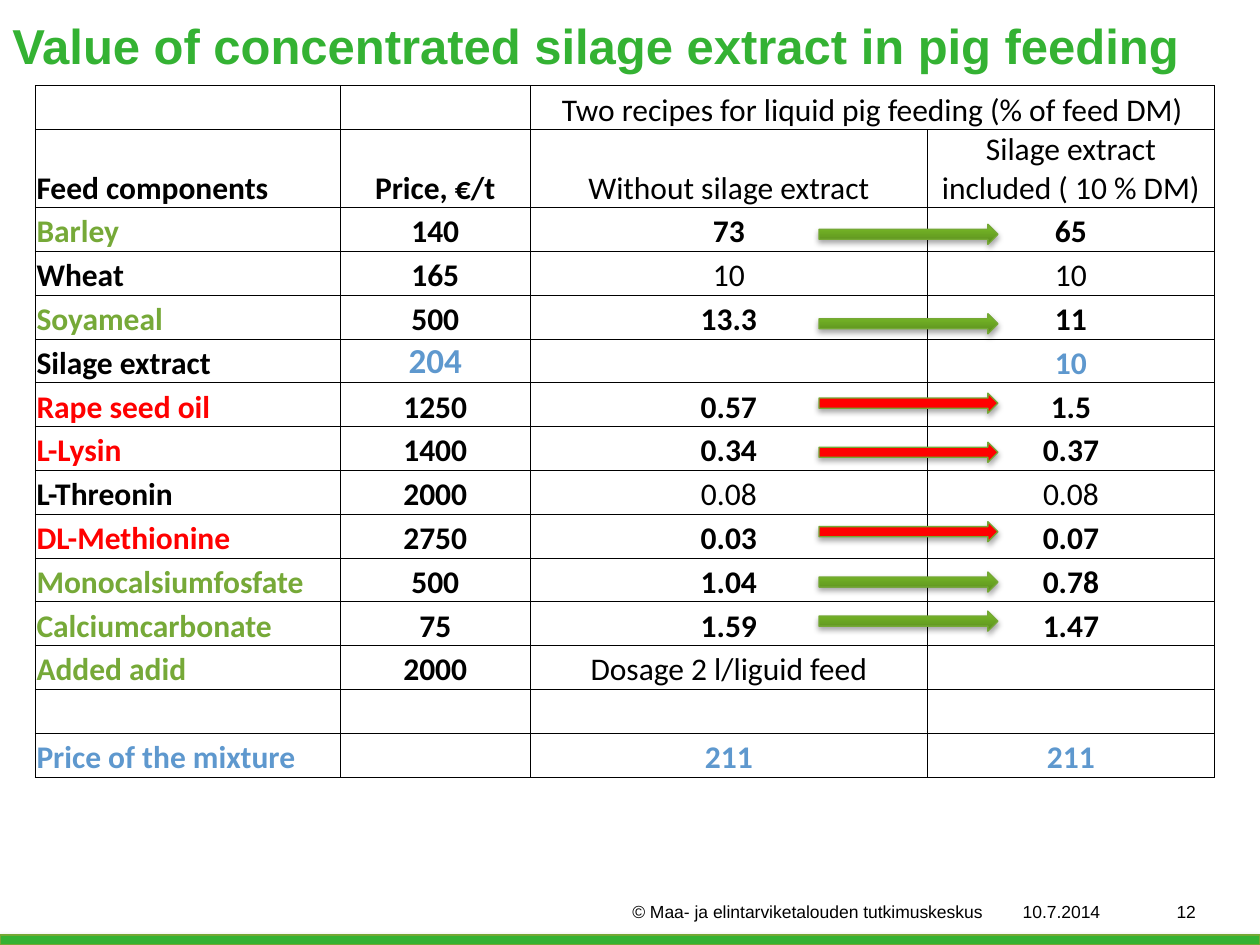
from copy import deepcopy
from dataclasses import dataclass

from pptx import Presentation
from pptx.dml.color import RGBColor
from pptx.enum.shapes import MSO_SHAPE
from pptx.enum.text import MSO_ANCHOR, PP_ALIGN
from pptx.oxml import parse_xml
from pptx.oxml.ns import qn
from pptx.util import Inches, Pt

LEFT, CENTER, RIGHT = PP_ALIGN.LEFT, PP_ALIGN.CENTER, PP_ALIGN.RIGHT
MIDDLE, BOTTOM = MSO_ANCHOR.MIDDLE, MSO_ANCHOR.BOTTOM
TOP = MSO_ANCHOR.TOP
RECTANGLE, RIGHT_ARROW = MSO_SHAPE.RECTANGLE, MSO_SHAPE.RIGHT_ARROW

NAMESPACE = 'xmlns:a="http://schemas.openxmlformats.org/drawingml/2006/main"'
BLACK, RED, BLUE = "000000", "FF0000", "5E98CE"
BRAND_GREEN, FEED_GREEN, LINE_GREEN = "34B233", "76A938", "74A834"
ARROW_GRADIENT = [(0, "598B1D"), (0.8, "74B426"), (1, "75B823")]
COLUMN_WIDTHS = [2.42, 1.51, 3.15, 2.28]
TABLE_HEIGHT, HEADING_HEIGHT = 5.49, 0.62
GREEN_ARROW_TOPS = [1.78, 2.49, 4.54, 4.85]
RED_ARROW_TOPS = [3.12, 3.51, 4.14]


@dataclass
class Feed:
    """One row of the feed table."""
    name: str = ""
    price: str = ""
    without: str = ""
    included: str = ""
    name_color: str = BLACK
    value_color: str = BLACK
    recipe_bold: bool = True
    price_size: int = 18


FEEDS = [
    Feed(without="Two recipes for liquid pig feeding (% of feed DM)", recipe_bold=False),
    Feed("Feed components", "Price, €/t", "Without silage extract",
         "Silage extract included ( 10 % DM)", recipe_bold=False),
    Feed("Barley", "140", "73", "65", FEED_GREEN),
    Feed("Wheat", "165", "10", "10", recipe_bold=False),
    Feed("Soyameal", "500", "13.3", "11", FEED_GREEN),
    Feed("Silage extract", "204", "", "10", value_color=BLUE, price_size=20),
    Feed("Rape seed oil", "1250", "0.57", "1.5", RED),
    Feed("L-Lysin", "1400", "0.34", "0.37", RED),
    Feed("L-Threonin", "2000", "0.08", "0.08", recipe_bold=False),
    Feed("DL-Methionine", "2750", "0.03", "0.07", RED),
    Feed("Monocalsiumfosfate", "500", "1.04", "0.78", FEED_GREEN),
    Feed("Calciumcarbonate", "75", "1.59", "1.47", FEED_GREEN),
    Feed("Added adid", "2000", "Dosage 2 l/liguid feed", "", FEED_GREEN, recipe_bold=False),
    Feed(),
    Feed("Price of the mixture", "", "211", "211", BLUE, BLUE),
]


def rgb(value):
    """Turn a hex string into a colour."""
    return RGBColor.from_string(value)


def add_run(para, text, size, font, color, bold=False):
    """Add one formatted run to a paragraph."""
    span = para.add_run()
    span.text = text
    span.font.size = Pt(size)
    span.font.name = font
    span.font.bold = bold
    span.font.color.rgb = rgb(color)


def add_text(page, place, text, size, color=BLACK, bold=False, align=LEFT, anchor=TOP):
    """Add a one-line text box."""
    box = page.shapes.add_textbox(*map(Inches, place))
    box.text_frame.word_wrap = False
    box.text_frame.vertical_anchor = anchor
    para = box.text_frame.paragraphs[0]
    para.alignment = align
    add_run(para, text, size, "Arial", color, bold)


def add_shadowed_shape(page, kind, place):
    """Add a green-outlined preset shape with a soft shadow below it."""
    shape = page.shapes.add_shape(kind, *map(Inches, place))
    shape.shadow.inherit = False
    shape.line.color.rgb = rgb(LINE_GREEN)
    shape.line.width = Pt(0.75)
    effects = shape._element.spPr.find(qn("a:effectLst"))
    effects.append(parse_xml(
        f'<a:outerShdw {NAMESPACE} blurRad="40000" dist="23000" dir="5400000" rotWithShape="0">'
        '<a:srgbClr val="000000"><a:alpha val="35000"/></a:srgbClr></a:outerShdw>'))
    return shape


def fill_solid(shape, color):
    """Fill a shape with one colour."""
    shape.fill.solid()
    shape.fill.fore_color.rgb = rgb(color)


def fill_gradient(shape, stops):
    """Fill a shape with a three-stop gradient that runs upwards."""
    shape.fill.gradient()
    shape.fill.gradient_angle = 90
    stop_list = next(shape._element.spPr.iter(qn("a:gsLst")))
    stop_list.append(deepcopy(stop_list[-1]))
    for stop, (position, color) in zip(shape.fill.gradient_stops, stops):
        stop.position = position
        stop.color.rgb = rgb(color)


def add_arrow(page, top):
    """Add one arrow from the first recipe to the second."""
    return add_shadowed_shape(page, RIGHT_ARROW, (6.5, top, 1.42, 0.16))


def format_cell(cell):
    """Give a cell thin black borders, no fill and tight margins."""
    cell.margin_left = cell.margin_right = cell.margin_top = Inches(0.01)
    cell.margin_bottom = 0
    cell.vertical_anchor = BOTTOM
    properties = cell._tc.get_or_add_tcPr()
    for side in ("lnL", "lnR", "lnT", "lnB"):
        properties.append(parse_xml(
            f'<a:{side} {NAMESPACE} w="6350"><a:solidFill><a:srgbClr val="{BLACK}"/>'
            f'</a:solidFill></a:{side}>'))
    cell.fill.background()


def fill_row(row, feed):
    """Write one feed into a table row."""
    entries = [
        (feed.name, 18, feed.name_color, True, LEFT),
        (feed.price, feed.price_size, feed.value_color if feed.price_size > 18 else BLACK,
         True, CENTER),
        (feed.without, 18, feed.value_color, feed.recipe_bold, CENTER),
        (feed.included, 18, feed.value_color, feed.recipe_bold, CENTER),
    ]
    for cell, (text, size, color, bold, align) in zip(row.cells, entries):
        format_cell(cell)
        if text:
            para = cell.text_frame.paragraphs[0]
            para.alignment = align
            add_run(para, text, size, "Calibri", color, bold)


def add_feed_table(page):
    """Add the table of feed prices and recipes."""
    place = (0.28, 0.68, sum(COLUMN_WIDTHS), TABLE_HEIGHT)
    table = page.shapes.add_table(len(FEEDS), len(COLUMN_WIDTHS), *map(Inches, place)).table
    table.first_row = table.horz_banding = False
    for column, width in zip(table.columns, COLUMN_WIDTHS):
        column.width = Inches(width)
    row_height = (TABLE_HEIGHT - HEADING_HEIGHT) / (len(FEEDS) - 1)
    for index, (row, feed) in enumerate(zip(table.rows, FEEDS)):
        row.height = Inches(HEADING_HEIGHT if index == 1 else row_height)
        fill_row(row, feed)
    table.cell(0, 2).merge(table.cell(0, 3))


def main():
    """Build the slide and save it."""
    deck = Presentation()
    deck.slide_width, deck.slide_height = Inches(10), Inches(7.5)
    page = deck.slides.add_slide(deck.slide_layouts[6])
    fill_solid(add_shadowed_shape(page, RECTANGLE, (0, 7.42, 10, 0.08)), BRAND_GREEN)
    add_text(page, (0, -0.27, 10, 1.25), "Value of concentrated silage extract in pig feeding",
             28, BRAND_GREEN, True, anchor=MIDDLE)
    add_feed_table(page)
    add_text(page, (7.99, 7.1, 0.84, 0.27), "10.7.2014", 10, align=RIGHT)
    add_text(page, (4.92, 7.1, 2.98, 0.27), "© Maa- ja elintarviketalouden tutkimuskeskus", 10)
    add_text(page, (8.92, 7.1, 0.67, 0.27), "12", 10, align=RIGHT)
    for top in GREEN_ARROW_TOPS:
        fill_gradient(add_arrow(page, top), ARROW_GRADIENT)
    for top in RED_ARROW_TOPS:
        fill_solid(add_arrow(page, top), RED)
    deck.save("out.pptx")


if __name__ == "__main__":
    main()
